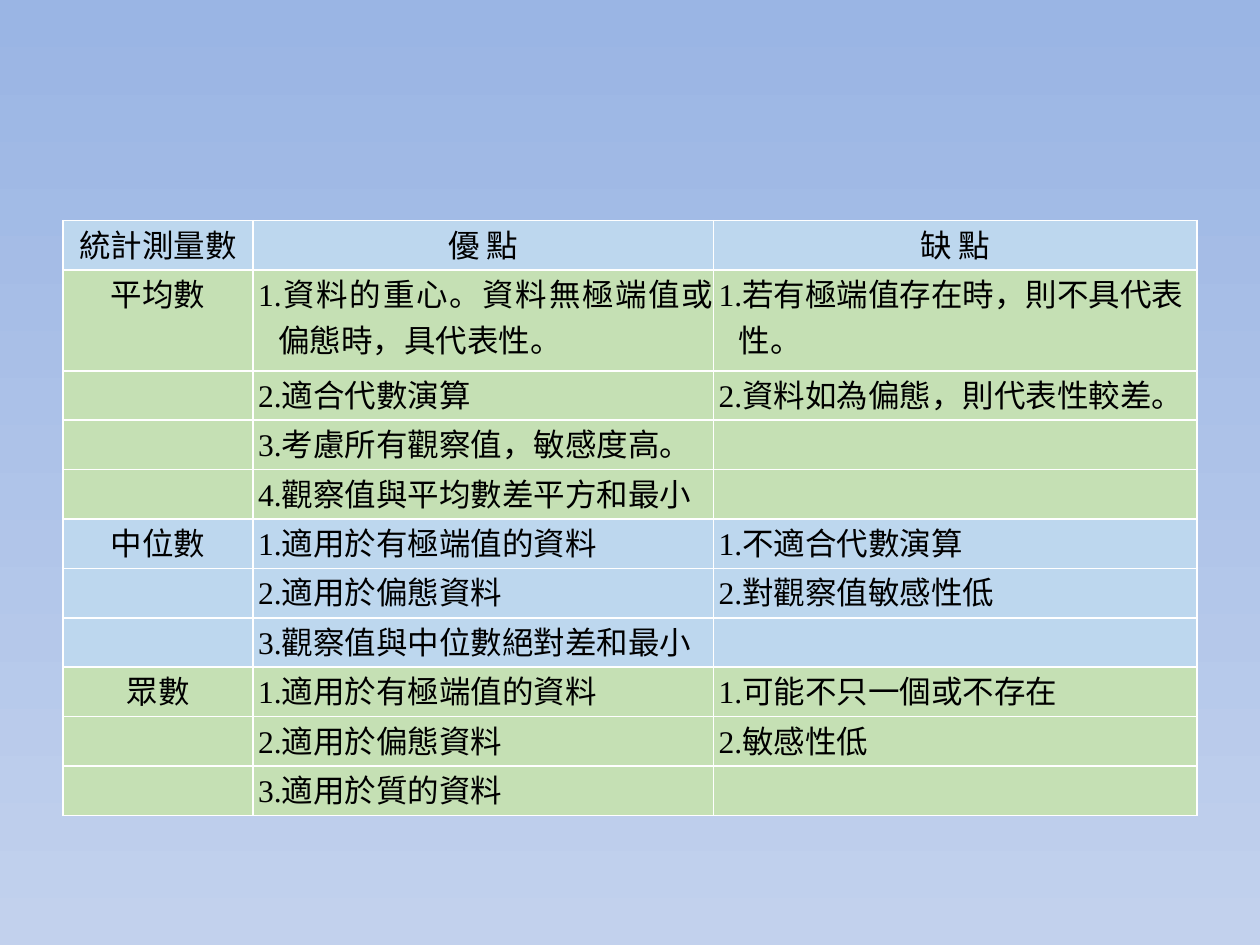
from dataclasses import dataclass
from itertools import zip_longest

from lxml import etree
from pptx import Presentation
from pptx import util as u
from pptx.dml.color import RGBColor
from pptx.enum import text
from pptx.oxml import ns


@dataclass(frozen=True)
class Theme:
    """Colours, type and line sizes of the slide."""
    top: str = "9AB5E4"
    base: str = "C2D1ED"
    blue: str = "BDD7EE"
    green: str = "C5E0B4"
    rule: str = "FFFFFF"
    ink: str = "000000"
    font: str = "Times New Roman"
    size: int = 18
    line: int = 1


THEME = Theme()
ALIGN = text.PP_ALIGN
HEAD = ("統計測量數", "優 點", "缺 點")
GROUPS = [
    ("平均數",
     ["資料的重心。資料無極端值或偏態時，具代表性。", "適合代數演算",
      "考慮所有觀察值，敏感度高。", "觀察值與平均數差平方和最小"],
     ["若有極端值存在時，則不具代表性。", "資料如為偏態，則代表性較差。"]),
    ("中位數",
     ["適用於有極端值的資料", "適用於偏態資料", "觀察值與中位數絕對差和最小"],
     ["不適合代數演算", "對觀察值敏感性低"]),
    ("眾數",
     ["適用於有極端值的資料", "適用於偏態資料", "適用於質的資料"],
     ["可能不只一個或不存在", "敏感性低"]),
]
COLS = (1.51, 3.66, 3.84)
TALL = 2.04


def write(frame, words, align=ALIGN.LEFT, left=0, hang=0):
    """Put one formatted paragraph into a text frame."""
    para = frame.paragraphs[0]
    para.alignment = align
    if hang:
        props = para._p.get_or_add_pPr()
        props.set("marL", str(u.Inches(left)))
        props.set("indent", str(-u.Inches(hang)))
    run = para.add_run()
    run.text = words
    run.font.name = THEME.font
    run.font.size = u.Pt(THEME.size)
    run.font.color.rgb = RGBColor.from_string(THEME.ink)


def dress(cell, fill, side=0):
    """Give a cell its borders, fill and margins."""
    props = cell._tc.get_or_add_tcPr()
    for edge in "LRTB":
        line = etree.SubElement(props, ns.qn(f"a:ln{edge}"), w=str(u.Pt(THEME.line)))
        solid = etree.SubElement(line, ns.qn("a:solidFill"))
        etree.SubElement(solid, ns.qn("a:srgbClr"), val=THEME.rule)
    cell.fill.solid()
    cell.fill.fore_color.rgb = RGBColor.from_string(fill)
    cell.margin_left = cell.margin_right = u.Inches(side)
    cell.margin_top = cell.margin_bottom = 0


def list_rows():
    """Return the fill and the three texts of each body row."""
    rows = []
    for pos, (name, pros, cons) in enumerate(GROUPS):
        fill = THEME.blue if pos % 2 else THEME.green
        for num, (pro, con) in enumerate(zip_longest(pros, cons), 1):
            rows.append((fill, (name if num == 1 else "", f"{num}.{pro}",
                                f"{num}.{con}" if con else "")))
    return rows


def add_grid(slide, left, top, width, height):
    """Place the table of pros and cons in the given box."""
    body = list_rows()
    shape = slide.shapes.add_table(len(body) + 1, len(COLS), left, top, width, height)
    table = shape.table
    table.first_row = table.horz_banding = False
    for col, share in zip(table.columns, COLS):
        col.width = int(width * share / sum(COLS))
    units = [1, TALL] + [1] * (len(body) - 1)
    for row, share in zip(table.rows, units):
        row.height = int(height * share / sum(units))
    for cell, words in zip(table.rows[0].cells, HEAD):
        dress(cell, THEME.blue, side=0.02)
        write(cell.text_frame, words, align=ALIGN.CENTER)
    styles = (dict(align=ALIGN.CENTER),
              dict(align=ALIGN.JUSTIFY, left=0.2, hang=0.16),
              dict(left=0.2, hang=0.16))
    for pos, (fill, line) in enumerate(body, 1):
        for cell, words, style in zip(table.rows[pos].cells, line, styles):
            dress(cell, fill)
            if words:
                write(cell.text_frame, words, **style)


def paint(slide):
    """Fill the background from top to bottom."""
    fill = slide.background.fill
    fill.gradient()
    fill.gradient_angle = 270
    for stop, tint, place in zip(fill.gradient_stops, (THEME.top, THEME.base), (0, 1)):
        stop.color.rgb = RGBColor.from_string(tint)
        stop.position = place


def main():
    """Build and save the slide."""
    deck = Presentation()
    wide, high = u.Inches(10), u.Inches(7.5)
    deck.slide_width, deck.slide_height = wide, high
    slide = deck.slides.add_slide(deck.slide_layouts[6])
    paint(slide)
    add_grid(slide, int(wide * 0.05), int(high * 7 / 30), int(wide * 0.9), int(high * 0.63))
    deck.save("out.pptx")


if __name__ == "__main__":
    main()
